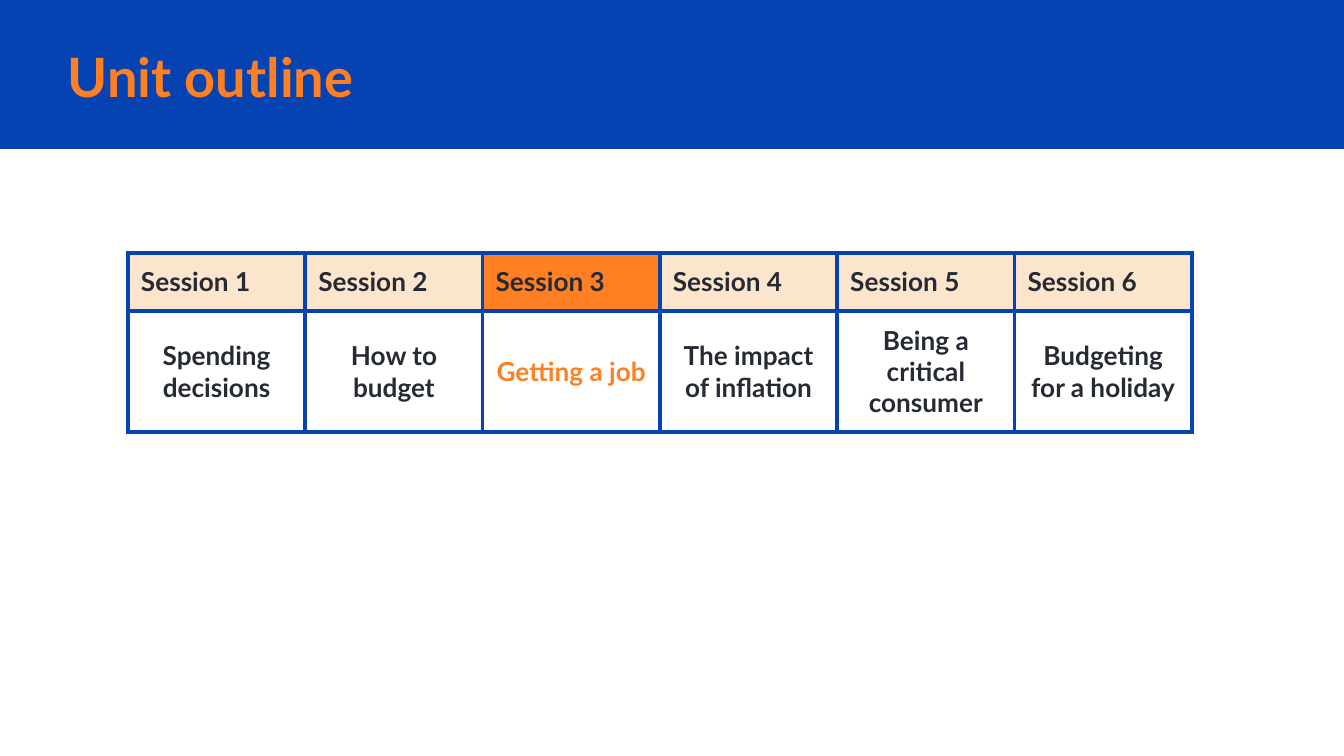
from dataclasses import dataclass

from lxml import etree
from pptx import Presentation
from pptx.dml.color import RGBColor
from pptx.enum.shapes import MSO_SHAPE
from pptx.enum.text import MSO_ANCHOR, PP_ALIGN
from pptx.oxml.ns import qn
from pptx.util import Emu, Pt

RECT = MSO_SHAPE.RECTANGLE
TOP, MIDDLE = MSO_ANCHOR.TOP, MSO_ANCHOR.MIDDLE
LEFT, CENTER = PP_ALIGN.LEFT, PP_ALIGN.CENTER

BLUE = RGBColor(0x05, 0x43, 0xB3)
ORANGE = RGBColor(0xFF, 0x80, 0x22)
CREAM = RGBColor(0xFC, 0xE5, 0xCD)
WHITE = RGBColor(0xFF, 0xFF, 0xFF)
INK = RGBColor(0x26, 0x2A, 0x33)

SCALE = 914400 / 134.4
INSET = 13
RULE = 2.25


@dataclass
class Session:
    topic: str
    active: bool = False


SESSIONS = [
    Session("Spending decisions"),
    Session("How to budget"),
    Session("Getting a job", active=True),
    Session("The impact of inflation"),
    Session("Being a critical consumer"),
    Session("Budgeting for a holiday"),
]


def px(size: int) -> Emu:
    return Emu(round(size * SCALE))


def write(frame, text: str, *, size: int = 14, color: RGBColor = INK,
          align=LEFT) -> None:
    para = frame.paragraphs[0]
    para.alignment = align
    run = para.add_run()
    run.text = text
    run.font.name = "Lato"
    run.font.size = Pt(size)
    run.font.bold = True
    run.font.color.rgb = color


def inset(box) -> None:
    box.margin_left = box.margin_right = px(INSET)
    box.margin_top = box.margin_bottom = px(INSET)


def border(cell) -> None:
    props = cell._tc.get_or_add_tcPr()
    for spot, side in enumerate(("lnL", "lnR", "lnT", "lnB")):
        line = etree.Element(qn(f"a:{side}"), w=str(Pt(RULE)))
        fill = etree.SubElement(line, qn("a:solidFill"))
        etree.SubElement(fill, qn("a:srgbClr"), val=str(BLUE))
        props.insert(spot, line)


def draw_cell(cell, text: str, *, fill: RGBColor, anchor=TOP, **style) -> None:
    inset(cell)
    cell.vertical_anchor = anchor
    cell.fill.solid()
    cell.fill.fore_color.rgb = fill
    border(cell)
    write(cell.text_frame, text, **style)


def draw_head(slide, title: str) -> None:
    band = slide.shapes.add_shape(RECT, 0, 0, px(1344), px(149))
    band.shadow.inherit = False
    band.fill.solid()
    band.fill.fore_color.rgb = BLUE
    band.line.fill.background()
    frame = slide.shapes.add_textbox(px(55), px(38), px(1137), px(75)).text_frame
    frame.word_wrap = True
    frame.vertical_anchor = MIDDLE
    inset(frame)
    write(frame, title, size=29, color=ORANGE)


def draw_plan(slide, plan: list[Session]) -> None:
    table = slide.shapes.add_table(
        2, len(plan), px(128), px(253), px(1064), px(179)).table
    table.rows[0].height = px(58)
    table.rows[1].height = px(121)
    for col, item in enumerate(plan):
        draw_cell(table.cell(0, col), f"Session {col + 1}",
                  fill=ORANGE if item.active else CREAM)
        draw_cell(table.cell(1, col), item.topic, fill=WHITE, anchor=MIDDLE,
                  color=ORANGE if item.active else INK, align=CENTER)


def main() -> None:
    deck = Presentation()
    deck.slide_width = px(1344)
    deck.slide_height = px(756)
    slide = deck.slides.add_slide(deck.slide_layouts[6])
    draw_head(slide, "Unit outline")
    draw_plan(slide, SESSIONS)
    deck.save("out.pptx")


if __name__ == "__main__":
    main()
